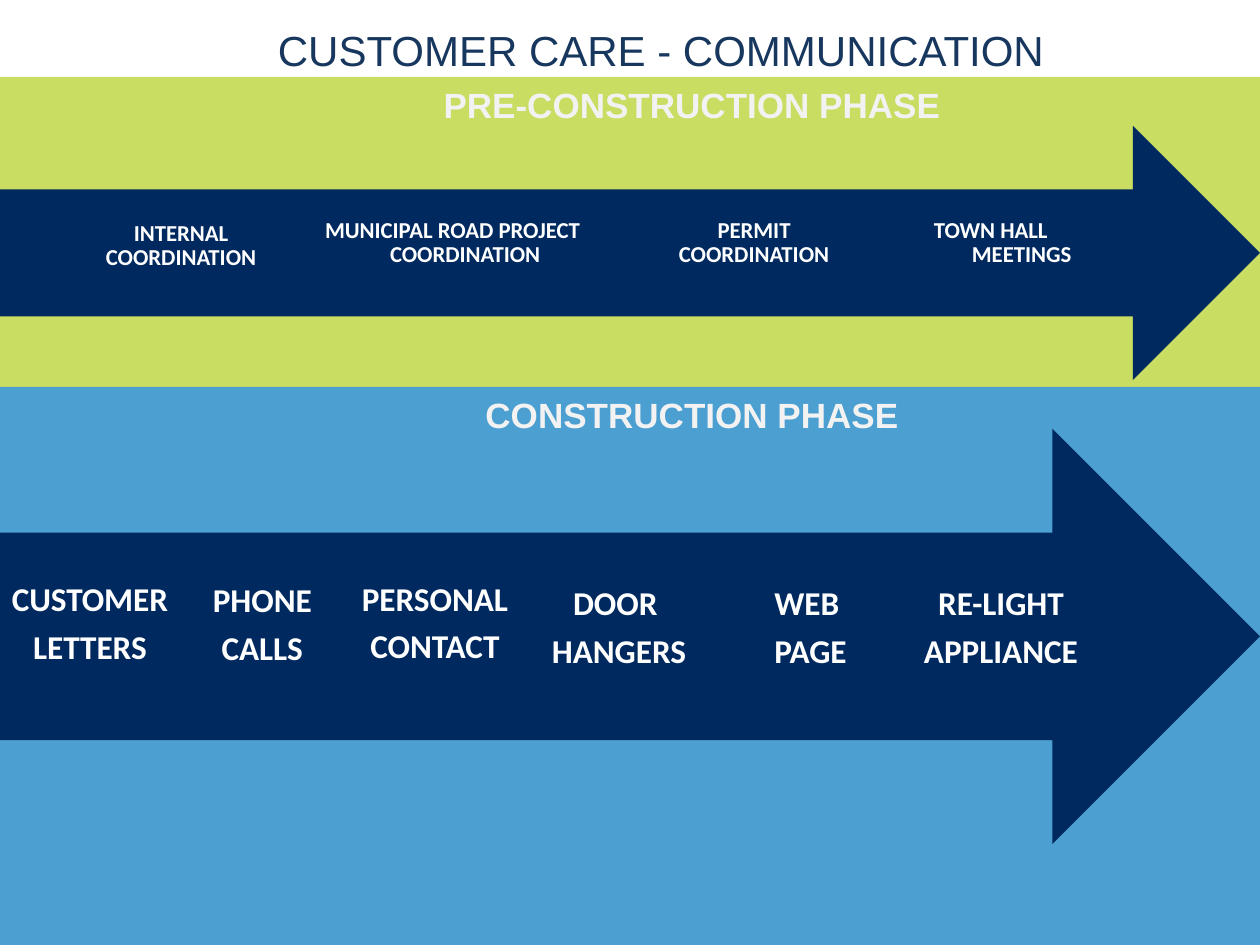
import pptx
import pptx.dml.color
import pptx.enum.shapes
import pptx.enum.text
import pptx.oxml.ns
import pptx.util
from lxml import etree

RGBColor = pptx.dml.color.RGBColor
SHAPES = pptx.enum.shapes.MSO_SHAPE
ALIGN = pptx.enum.text.PP_ALIGN
ANCHOR = pptx.enum.text.MSO_ANCHOR

EMU_PER_PX = 914400 / 126
SLIDE_WIDTH, SLIDE_HEIGHT = 1260, 945

NAVY = RGBColor(0x00, 0x2A, 0x5F)
TITLE_BLUE = RGBColor(0x17, 0x37, 0x5E)
LIME = RGBColor(0xB2, 0xCF, 0x1F)
BLUE = RGBColor(0x00, 0x77, 0xBE)
PALE_GREY = RGBColor(0xF2, 0xF2, 0xF2)
WHITE = RGBColor(0xFF, 0xFF, 0xFF)

BAND_OPACITY = 70

# Left, top, width, lines, and (first line, wrapped line) indents or None for centred text
PRE_CONSTRUCTION_STEPS = [
    (68, 202, 226, ["INTERNAL COORDINATION"], None),
    (325, 199, 261, ["MUNICIPAL ROAD PROJECT COORDINATION"], (0, 65)),
    (678, 199, 152, ["PERMIT COORDINATION"], None),
    (908, 199, 226, ["TOWN HALL MEETINGS"], (26, 64)),
]
CONSTRUCTION_STEPS = [
    (10, 553, 160, ["CUSTOMER ", "LETTERS"], None),
    (212, 554, 108, ["PHONE ", "CALLS "], None),
    (355, 552, 160, ["PERSONAL", "CONTACT"], None),
    (539, 557, 160, ["DOOR ", "HANGERS"], None),
    (733, 557, 155, ["WEB ", "PAGE"], None),
    (921, 557, 160, ["RE-LIGHT", "APPLIANCE"], None),
]


def px(length):
    return pptx.util.Emu(round(length * EMU_PER_PX))


def style_font(paragraph, name, size, color, bold):
    font = paragraph.font
    font.name, font.size, font.bold = name, pptx.util.Pt(size), bold
    font.color.rgb = color


def set_insets(frame, left, top, right, bottom):
    frame.margin_left, frame.margin_top = px(left), px(top)
    frame.margin_right, frame.margin_bottom = px(right), px(bottom)


def add_filled_shape(slide, kind, top, height, color):
    """Add a borderless shape across the full slide width."""
    shape = slide.shapes.add_shape(kind, 0, px(top), px(SLIDE_WIDTH), px(height))
    shape.shadow.inherit = False
    shape.fill.solid()
    shape.fill.fore_color.rgb = color
    shape.line.fill.background()
    return shape


def add_title(slide, text):
    title = slide.shapes.add_textbox(0, 0, px(SLIDE_WIDTH), px(83))
    frame = title.text_frame
    frame.word_wrap = True
    frame.vertical_anchor = ANCHOR.MIDDLE
    set_insets(frame, 75, 22, 13, 6)
    paragraph = frame.paragraphs[0]
    paragraph.text = text
    paragraph.alignment = ALIGN.CENTER
    style_font(paragraph, "Arial", 24, TITLE_BLUE, False)


def add_phase_band(slide, top, height, color, heading):
    band = add_filled_shape(slide, SHAPES.RECTANGLE, top, height, color)
    rgb = next(band.fill._xPr.iter(pptx.oxml.ns.qn("a:srgbClr")))
    alpha = etree.SubElement(rgb, pptx.oxml.ns.qn("a:alpha"))
    alpha.set("val", str(BAND_OPACITY * 1000))
    frame = band.text_frame
    frame.word_wrap = True
    frame.vertical_anchor = ANCHOR.TOP
    set_insets(frame, 137, 6, 13, 6)
    paragraph = frame.paragraphs[0]
    paragraph.text = heading
    paragraph.alignment = ALIGN.CENTER
    style_font(paragraph, "Arial", 20, PALE_GREY, True)


def add_step(slide, step, height, size):
    left, top, width, lines, indents = step
    label = slide.shapes.add_textbox(px(left), px(top), px(width), px(height))
    frame = label.text_frame
    frame.word_wrap = True
    frame.vertical_anchor = ANCHOR.MIDDLE
    set_insets(frame, 0, 18, 0, 18)
    frame.text = "\n".join(lines)
    for paragraph in frame.paragraphs:
        paragraph.alignment = ALIGN.LEFT if indents else ALIGN.CENTER
        paragraph.line_spacing = 0.9
        paragraph.space_after = pptx.util.Pt(0.35 * size)
        if indents:
            first, wrapped = indents
            properties = paragraph._p.get_or_add_pPr()
            properties.set("marL", str(px(wrapped)))
            properties.set("indent", str(px(first - wrapped)))
        style_font(paragraph, "Calibri", size, WHITE, True)


def add_arrow_steps(slide, top, height, steps, step_height, size):
    add_filled_shape(slide, SHAPES.RIGHT_ARROW, top, height, NAVY)
    for step in steps:
        add_step(slide, step, step_height, size)


def main():
    presentation = pptx.Presentation()
    presentation.slide_width = px(SLIDE_WIDTH)
    presentation.slide_height = px(SLIDE_HEIGHT)
    slide = presentation.slides.add_slide(presentation.slide_layouts[6])

    add_phase_band(slide, 77, 310, LIME, "PRE-CONSTRUCTION PHASE")
    add_arrow_steps(slide, 126, 254, PRE_CONSTRUCTION_STEPS, 88, 13)
    add_phase_band(slide, 387, SLIDE_HEIGHT - 387, BLUE, "CONSTRUCTION PHASE")
    add_arrow_steps(slide, 429, 415, CONSTRUCTION_STEPS, 144, 19)
    add_title(slide, "CUSTOMER CARE - COMMUNICATION")

    presentation.save("out.pptx")


if __name__ == "__main__":
    main()
